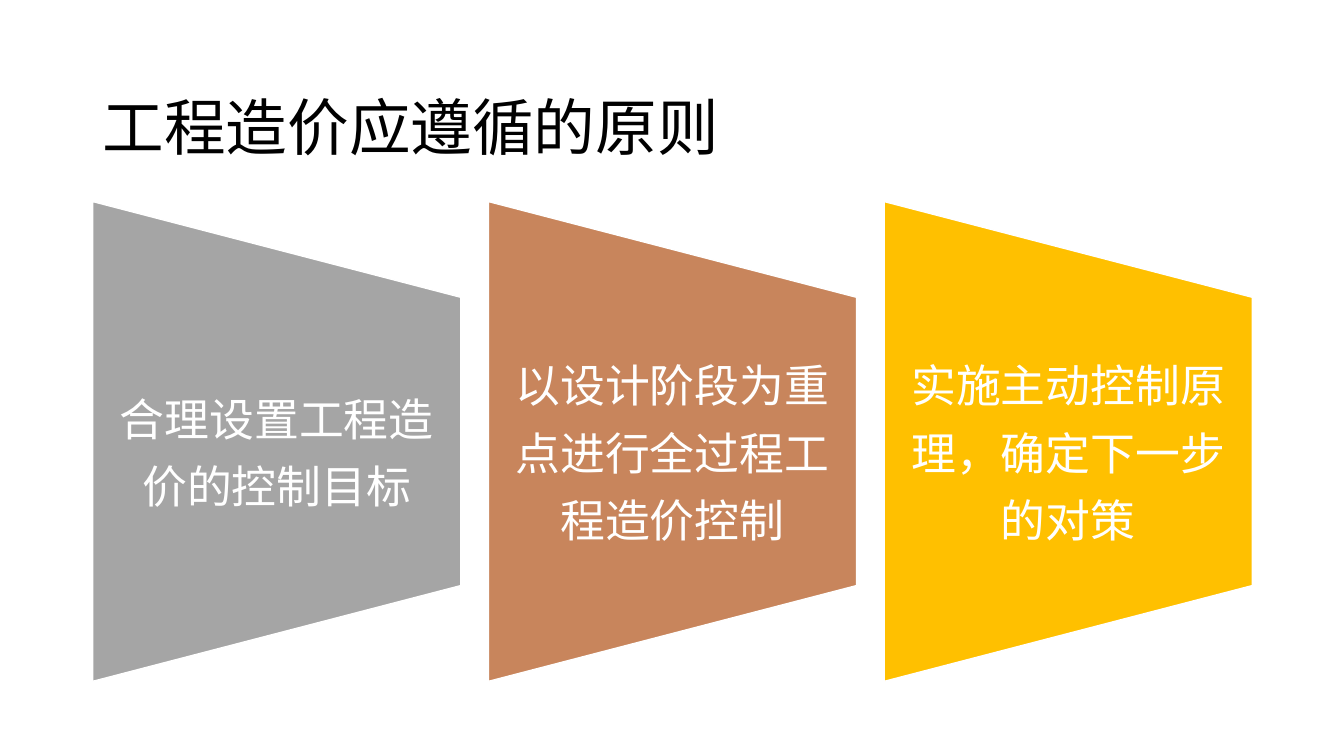
"""Build the slide on the principles of project cost control."""
import pptx
import pptx.dml.color
import pptx.enum.text
import pptx.oxml
import pptx.oxml.ns
import pptx.util

Inches = pptx.util.Inches
Pt = pptx.util.Pt


def color(value):
    return pptx.dml.color.RGBColor.from_string(value)


def add_text(sp, text, size, font, fill, spacing, insets):
    tf = sp.text_frame
    tf.word_wrap = True
    tf.vertical_anchor = pptx.enum.text.MSO_ANCHOR.MIDDLE
    tf.margin_left = tf.margin_right = Inches(insets[0])
    tf.margin_top, tf.margin_bottom = Inches(insets[1]), Inches(insets[2])
    p = tf.paragraphs[0]
    p.line_spacing = spacing
    r = p.add_run()
    r.text = text
    r.font.size = Pt(size)
    r.font.name = font
    r.font.color.rgb = color(fill)
    ea = pptx.oxml.parse_xml(
        f'<a:ea {pptx.oxml.ns.nsdecls("a")} typeface="Noto Sans CJK JP"/>')
    r.font._element.find(pptx.oxml.ns.qn("a:latin")).addnext(ea)
    return p


prs = pptx.Presentation()
prs.slide_width, prs.slide_height = Inches(13.33), Inches(7.5)
s = prs.slides.add_slide(prs.slide_layouts[6])

title = s.shapes.add_textbox(Inches(0.92), Inches(0.4), Inches(11.5), Inches(1.45))
p = add_text(title, "工程造价应遵循的原则", 44, "Times New Roman", "000000", 1.5,
             (0.1, 0.05, 0.16))
p.alignment = pptx.enum.text.PP_ALIGN.LEFT

principles = [
    ("合理设置工程造价的控制目标", "A5A5A5"),
    ("以设计阶段为重点进行全过程工程造价控制", "C8855C"),
    ("实施主动控制原理，确定下一步的对策", "FFC000"),
]
left, top, width, height, pitch, slant = 0.92, 2, 3.65, 4.76, 3.925, 0.95

for i, (text, fill) in enumerate(principles):
    x = left + i * pitch
    outline = s.shapes.build_freeform(Inches(x), Inches(top + height))
    outline.add_line_segments([
        (Inches(x), Inches(top)),
        (Inches(x + width), Inches(top + slant)),
        (Inches(x + width), Inches(top + height - slant)),
    ], close=True)
    sp = outline.convert_to_shape()
    sp.shadow.inherit = False
    sp.fill.solid()
    sp.fill.fore_color.rgb = color(fill)
    sp.line.color.rgb = color("FFFFFF")
    sp.line.width = Pt(1)
    p = add_text(sp, text, 32, "Noto Sans CJK JP", "FFFFFF", 1.25, (0.22, 1.03, 0.95))
    p.alignment = pptx.enum.text.PP_ALIGN.CENTER

prs.save("out.pptx")
